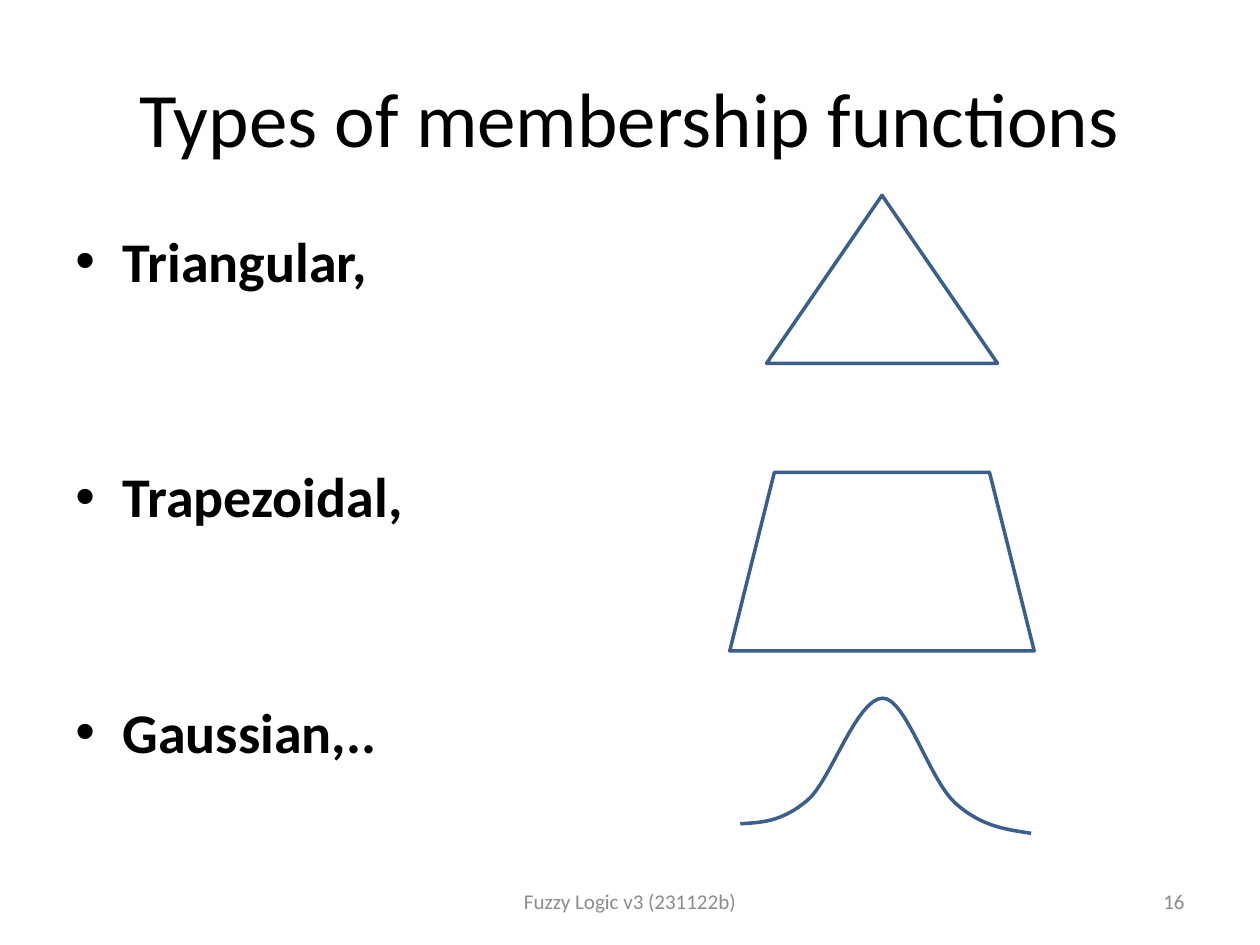
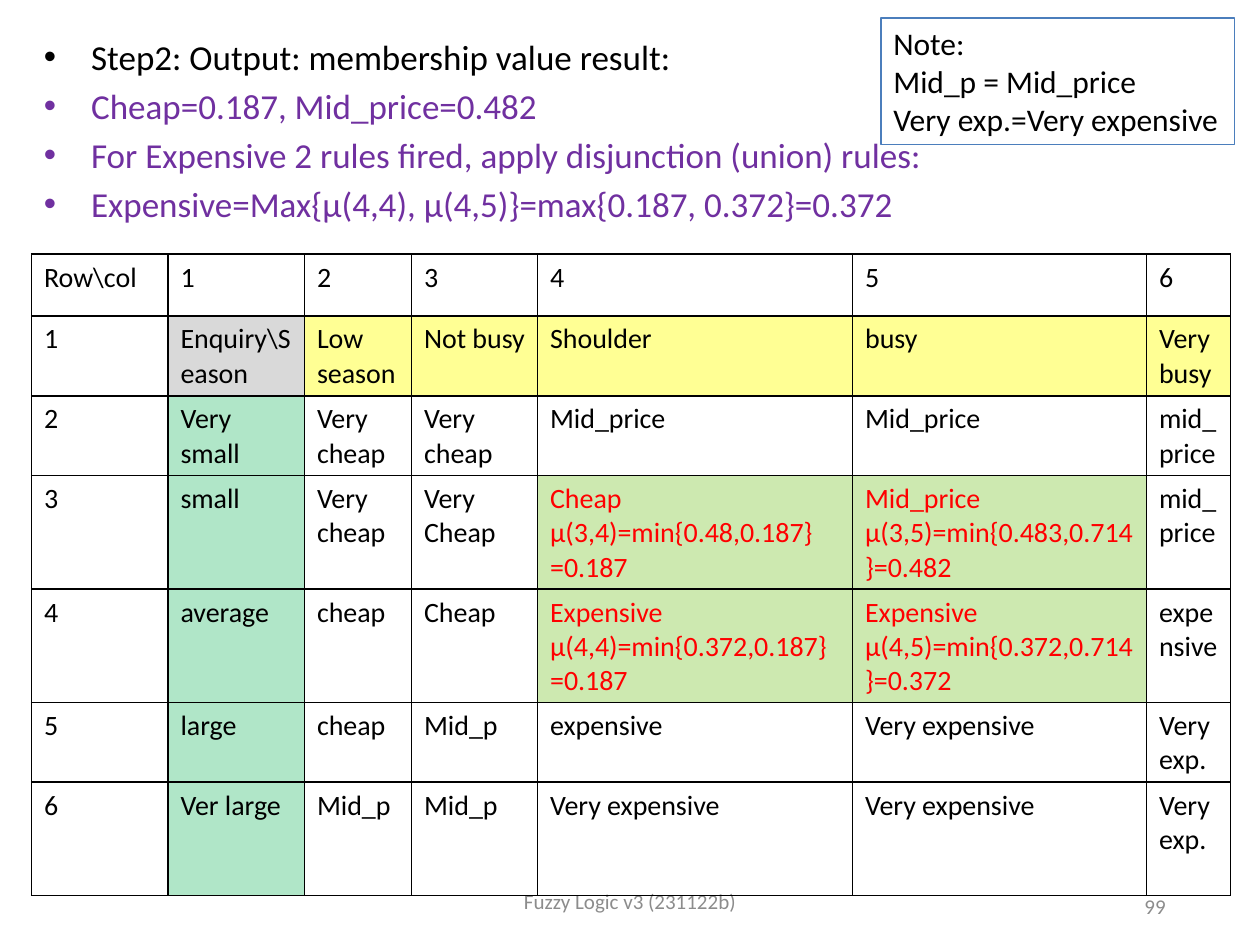
import pptx
import pptx.util
import pptx.dml.color
import pptx.enum.shapes
import pptx.enum.text
import pptx.oxml.ns
from dataclasses import dataclass
from lxml import etree

ALIGN = pptx.enum.text.PP_ALIGN
ANCHOR = pptx.enum.text.MSO_ANCHOR
SHAPE = pptx.enum.shapes.MSO_SHAPE


@dataclass(frozen=True)
class Theme:
    font: str = "Calibri"
    ink: str = "000000"
    muted: str = "8C8C8C"
    accent: str = "7030A0"
    fired: str = "FF0000"
    outline: str = "3A5F8C"
    note_line: str = "4B7EBC"
    title: int = 44
    body: int = 32
    steps: int = 20
    note: int = 18
    cell: int = 16
    footer: int = 12
    # Cell fills: colour and opacity in percent
    corner: tuple = ("D9D9D9", 100)
    season: tuple = ("FFFF00", 42)
    enquiry: tuple = ("00B050", 31)
    rule: tuple = ("92D050", 45)


T = Theme()
COLS, ROWS = 120, 90
UNIT = pptx.util.Inches(10) // COLS  # square grid cell
FOOTER = "Fuzzy Logic v3 (231122b)"


@dataclass(frozen=True)
class Box:
    """An area in grid columns and rows."""
    x: float
    y: float
    w: float
    h: float

    def emu(self):
        return [round(v * UNIT) for v in (self.x, self.y, self.w, self.h)]

    def point(self, across, down):
        return (round((self.x + across * self.w) * UNIT),
                round((self.y + down * self.h) * UNIT))


def rgb(color):
    return pptx.dml.color.RGBColor.from_string(color)


def add_xml(parent, tag, **attrs):
    return etree.SubElement(parent, pptx.oxml.ns.qn(tag), attrs)


# Text
def write(p, text, size, color=T.ink, bold=False):
    r = p.add_run()
    r.text = text
    r.font.name = T.font
    r.font.size = pptx.util.Pt(size)
    r.font.bold = bold
    r.font.color.rgb = rgb(color)


def paragraphs(tf, count):
    return [tf.paragraphs[0]] + [tf.add_paragraph() for _ in range(count - 1)]


def text_frame(slide, box, anchor=ANCHOR.TOP):
    tf = slide.shapes.add_textbox(*box.emu()).text_frame
    tf.word_wrap = True
    tf.vertical_anchor = anchor
    return tf


def add_label(slide, box, text, size, align, color=T.ink):
    p = text_frame(slide, box, ANCHOR.MIDDLE).paragraphs[0]
    p.alignment = align
    write(p, text, size, color)


def add_bullets(slide, box, items, size, gap, bold=False):
    """Items are pairs of text and colour."""
    tf = text_frame(slide, box)
    for i, (p, (text, color)) in enumerate(zip(paragraphs(tf, len(items)), items)):
        p.space_before = pptx.util.Pt(gap if i else 0)
        pPr = p._p.get_or_add_pPr()
        indent = round(4.5 * UNIT)
        pPr.set("marL", str(indent))
        pPr.set("indent", str(-indent))
        add_xml(pPr, "a:buFont", typeface="Arial")
        add_xml(pPr, "a:buChar", char="•")
        write(p, text, size, color, bold)


def add_footer(slide, number, number_box):
    add_label(slide, Box(41, 83.4, 38, 4.8), FOOTER, T.footer, ALIGN.CENTER, T.muted)
    add_label(slide, number_box, number, T.footer, ALIGN.RIGHT, T.muted)


# Outlined shapes
def outline(sp, color, width):
    sp.shadow.inherit = False
    sp.fill.background()
    sp.line.color.rgb = rgb(color)
    sp.line.width = pptx.util.Pt(width)
    return sp


def add_outline(slide, kind, box, color=T.outline, width=2):
    return outline(slide.shapes.add_shape(kind, *box.emu()), color, width)


def bezier(a, b, c, d, steps=16):
    for i in range(1, steps + 1):
        t = i / steps
        u = 1 - t
        yield tuple(u**3 * k + 3 * u * u * t * m + 3 * u * t * t * n + t**3 * q
                    for k, m, n, q in zip(a, b, c, d))


def add_bell(slide, box):
    # Nodes and handles as shares of the box
    nodes = [(0, .92), (.07, .91), (.14, .91), (.23, .75), (.31, .61), (.4, 0),
             (.49, 0), (.57, 0), (.65, .6), (.74, .77), (.83, .94), (.91, .96),
             (1, .99)]
    points = [box.point(*xy) for i in range(0, len(nodes) - 1, 3)
              for xy in bezier(*nodes[i:i + 4])]
    builder = slide.shapes.build_freeform(*box.point(*nodes[0]))
    builder.add_line_segments(points, close=False)
    outline(builder.convert_to_shape(), T.outline, 2)


def add_note(slide, box, lines):
    sp = add_outline(slide, SHAPE.RECTANGLE, box, T.note_line, .75)
    tf = sp.text_frame
    tf.word_wrap = False
    tf.vertical_anchor = ANCHOR.TOP
    for p, line in zip(paragraphs(tf, len(lines)), lines):
        p.alignment = ALIGN.LEFT
        write(p, line, T.note)


# Rule table
def cell_fill(row, col, fired):
    if fired:
        return T.rule
    if row == 1 and col > 0:
        return T.corner if col == 1 else T.season
    return T.enquiry if row > 1 and col == 1 else None


def style_cell(cell, fill):
    tcPr = cell._tc.get_or_add_tcPr()
    for side in ("a:lnL", "a:lnR", "a:lnT", "a:lnB"):
        ln = add_xml(tcPr, side, w=str(pptx.util.Pt(1)))
        add_xml(add_xml(ln, "a:solidFill"), "a:srgbClr", val=T.ink)
    if fill is None:
        cell.fill.background()
        return
    color, opacity = fill
    cell.fill.solid()
    cell.fill.fore_color.rgb = rgb(color)
    if opacity < 100:
        clr = tcPr.find(pptx.oxml.ns.qn("a:solidFill"))[0]
        add_xml(clr, "a:alpha", val=str(opacity * 1000))


def add_rule_table(slide, box, widths, heights, rows):
    table = slide.shapes.add_table(len(rows), len(widths), *box.emu()).table
    table.first_row = table.horz_banding = False
    for column, width in zip(table.columns, widths):
        column.width = round(width * UNIT)
    for line, height in zip(table.rows, heights):
        line.height = round(height * UNIT)
    for i, row in enumerate(rows):
        for j, text in enumerate(row):
            lines = text.split("\n")
            fired = len(lines) > 1
            cell = table.cell(i, j)
            style_cell(cell, cell_fill(i, j, fired))
            for p, line in zip(paragraphs(cell.text_frame, len(lines)), lines):
                write(p, line, T.cell, T.fired if fired else T.ink)


# Slides
def membership_types(slide):
    add_label(slide, Box(6, 3.6, 108, 15), "Types of membership functions",
              T.title, ALIGN.CENTER)
    names = ["Triangular,", "Trapezoidal,", "Gaussian,.."]
    add_bullets(slide, Box(6, 21, 108, 59.4), [(n, T.ink) for n in names],
                T.body, 96, bold=True)
    add_footer(slide, "16", Box(86, 83.4, 28, 4.8))
    add_outline(slide, SHAPE.ISOSCELES_TRIANGLE, Box(73, 18.6, 22, 16))
    add_outline(slide, SHAPE.TRAPEZOID, Box(69.5, 45, 29, 17))
    add_bell(slide, Box(70.5, 66.5, 27.7, 13))


def rule_output(slide):
    add_bullets(slide, Box(3, 2.8, 106.8, 57), [
        ("Step2: Output: membership value result:", T.ink),
        ("Cheap=0.187, Mid_price=0.482", T.accent),
        ("For Expensive 2 rules fired, apply disjunction (union) rules:", T.accent),
        ("Expensive=Max{μ(4,4), μ(4,5)}=max{0.187, 0.372}=0.372", T.accent),
    ], T.steps, 4)
    add_footer(slide, "99", Box(85.2, 83.9, 27, 4.8))
    add_rule_table(
        slide, Box(3, 24.2, 114, 61),
        [13, 13, 10.2, 12, 30, 28, 8],
        [5.9, 7.2, 7.2, 10.3, 10.3, 7.3, 10.8],
        [["Row\\col", "1", "2", "3", "4", "5", "6"],
         ["1", "Enquiry\\Season", "Low season", "Not busy", "Shoulder", "busy",
          "Very busy"],
         ["2", "Very small", "Very cheap", "Very cheap", "Mid_price", "Mid_price",
          "mid_price"],
         ["3", "small", "Very cheap", "Very Cheap",
          "Cheap\nμ(3,4)=min{0.48,0.187}=0.187",
          "Mid_price\nμ(3,5)=min{0.483,0.714}=0.482", "mid_price"],
         ["4", "average", "cheap", "Cheap",
          "Expensive\nμ(4,4)=min{0.372,0.187}=0.187",
          "Expensive\nμ(4,5)=min{0.372,0.714}=0.372", "expensive"],
         ["5", "large", "cheap", "Mid_p", "expensive", "Very expensive", "Very exp."],
         ["6", "Ver large", "Mid_p", "Mid_p", "Very expensive", "Very expensive",
          "Very exp."]])
    add_note(slide, Box(83.9, 1.7, 33.7, 12.1),
             ["Note:", "Mid_p = Mid_price", "Very exp.=Very expensive"])


def main():
    prs = pptx.Presentation()
    prs.slide_width, prs.slide_height = COLS * UNIT, ROWS * UNIT
    for build in (membership_types, rule_output):
        build(prs.slides.add_slide(prs.slide_layouts[6]))
    prs.save("out.pptx")


if __name__ == "__main__":
    main()
